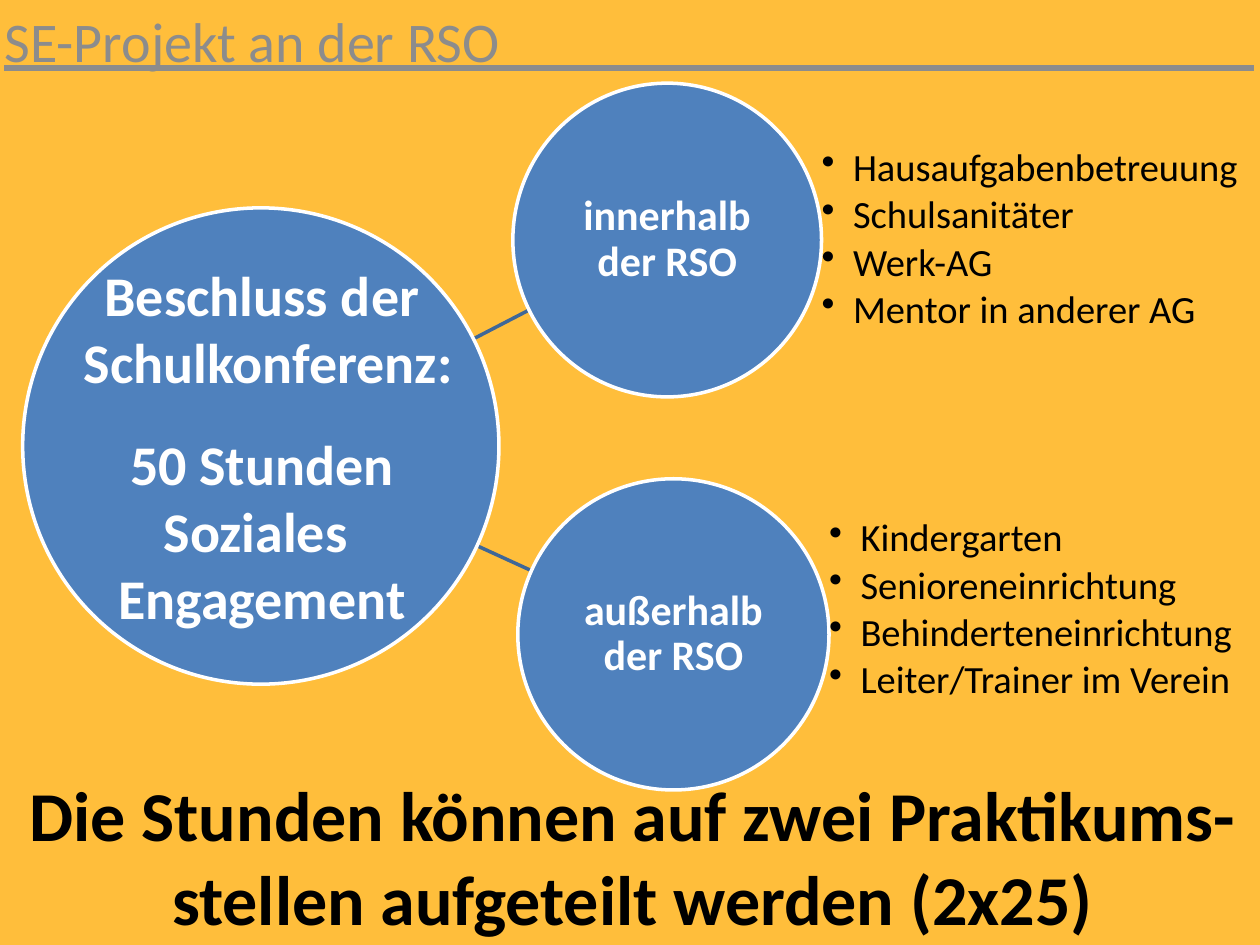
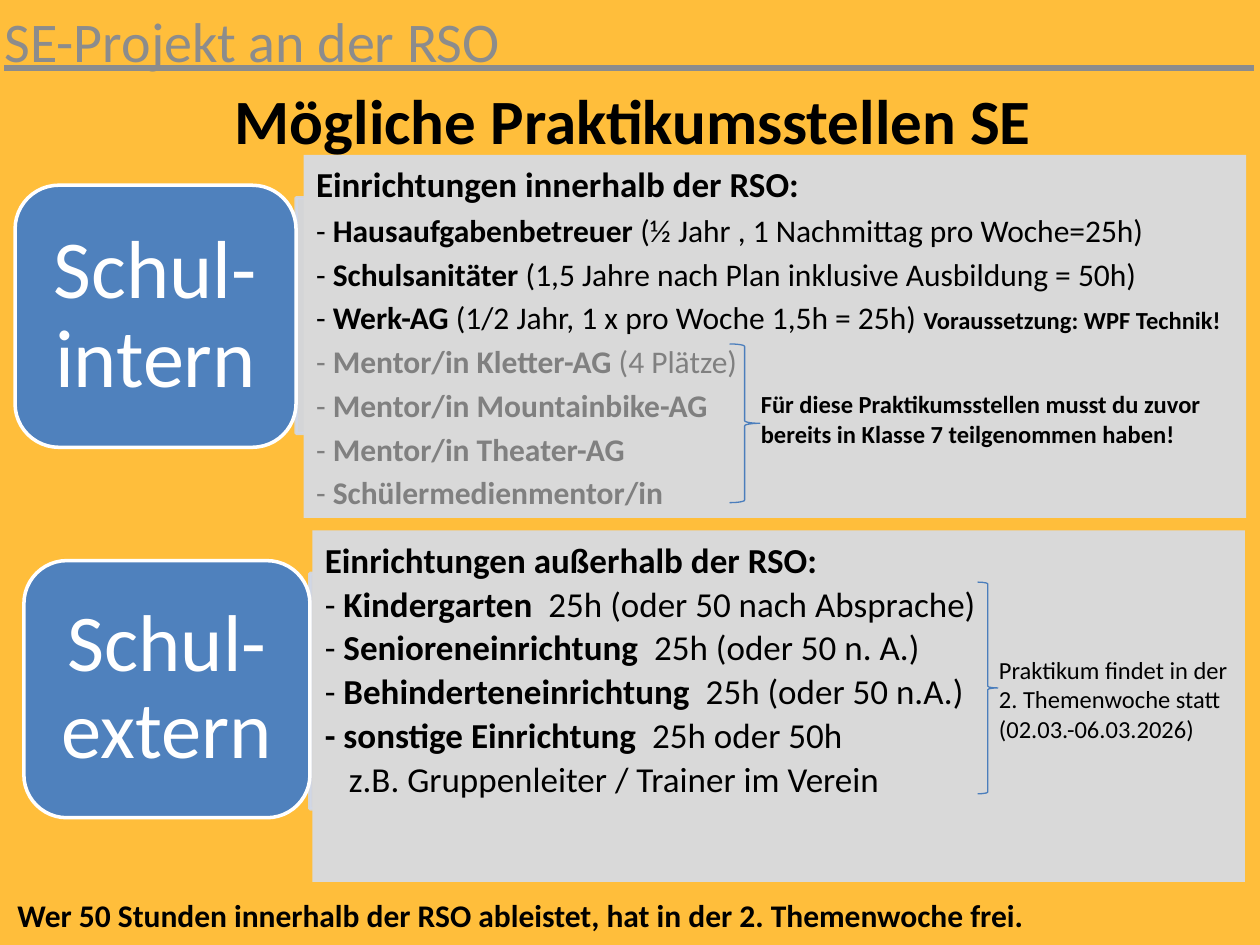
from lxml import etree
from pptx import Presentation
from pptx.dml.color import RGBColor
from pptx.enum.shapes import MSO_CONNECTOR, MSO_SHAPE
from pptx.enum.text import MSO_ANCHOR, PP_ALIGN
from pptx.oxml.ns import qn
from pptx.util import Pt

PX = 9144
FONT = "Calibri"
AMBER = RGBColor(0xFF, 0xBE, 0x3B)
BLUE = RGBColor(0x4F, 0x81, 0xBD)
STEEL = RGBColor(0x3F, 0x67, 0x97)
BRACE = RGBColor(0x4B, 0x7E, 0xBC)
PALE = RGBColor(0xD0, 0xD8, 0xE8)
SILVER = RGBColor(0xD9, 0xD9, 0xD9)
GREY = RGBColor(0x8C, 0x8C, 0x8C)
FADED = RGBColor(0x80, 0x80, 0x80)
BLACK = RGBColor(0, 0, 0)
WHITE = RGBColor(0xFF, 0xFF, 0xFF)
LEFT, CENTER = PP_ALIGN.LEFT, PP_ALIGN.CENTER
TOP, MIDDLE = MSO_ANCHOR.TOP, MSO_ANCHOR.MIDDLE
OVAL, RECT = MSO_SHAPE.OVAL, MSO_SHAPE.RECTANGLE
ROUND, ARROW = MSO_SHAPE.ROUNDED_RECTANGLE, MSO_SHAPE.RIGHT_ARROW
CURLY = MSO_SHAPE.RIGHT_BRACE
STRAIGHT = MSO_CONNECTOR.STRAIGHT


def emu(*sizes):
    """Turn px lengths into EMU."""
    return [size * PX for size in sizes]


def write(shape, rows, size, color=BLACK, bold=False, align=LEFT,
          anchor=TOP, inset=(10, 5), wrap=True, line=None):
    """Write one paragraph per row, with bold toggled at each asterisk."""
    frame = shape.text_frame
    frame.word_wrap = wrap
    frame.vertical_anchor = anchor
    frame.margin_left, frame.margin_top = emu(*inset)
    frame.margin_right, frame.margin_bottom = emu(*inset)
    for i, row in enumerate(rows):
        para = frame.add_paragraph() if i else frame.paragraphs[0]
        para.alignment = align
        para.line_spacing = line
        font = para.font
        font.name, font.size, font.bold = FONT, Pt(size), bold
        font.color.rgb = color
        for j, part in enumerate(row.split("*")):
            if part:
                run = para.add_run()
                run.text = part
                if "*" in row:
                    run.font.bold = j % 2 == 1
    return frame.paragraphs


def label(slide, box, rows, size, **style):
    """Add a text box."""
    return write(slide.shapes.add_textbox(*emu(*box)), rows, size, **style)


def form(slide, kind, box, fill=None, edge=None, width=2):
    """Add a preset shape without shadow."""
    shape = slide.shapes.add_shape(kind, *emu(*box))
    shape.shadow.inherit = False
    if fill is None:
        shape.fill.background()
    else:
        shape.fill.solid()
        shape.fill.fore_color.rgb = fill
    if edge is None:
        shape.line.fill.background()
    else:
        shape.line.color.rgb = edge
        shape.line.width = Pt(width)
    return shape


def title(slide):
    """Add the ruled title that all slides share."""
    label(slide, (-20, 0, 1039, 71), ["SE-Projekt an der RSO" + "_" * 27], 32,
          color=GREY, align=CENTER)[0].font.underline = True


def link(slide, start, end):
    """Draw a line between two circles."""
    line = slide.shapes.add_connector(STRAIGHT, *emu(*start, *end))
    line.line.color.rgb = STEEL
    line.line.width = Pt(2)
    etree.SubElement(line._element.spPr, qn("a:effectLst"))


def hub(slide, box):
    """Add the large circle with the decision."""
    x, y, w, h = box
    form(slide, OVAL, box, BLUE, WHITE)
    style = dict(color=WHITE, bold=True, align=CENTER, wrap=False)
    label(slide, (x + 37, y + 37, 316, 118),
          ["Beschluss der ", "Schulkonferenz:"], 32, **style)
    label(slide, (x + 65, y + 171, 250, 172),
          ["50 Stunden", "Soziales ", "Engagement"], 32, **style)


def branch(slide, box, name, items, lift=0):
    """Add a circle and the bulleted list to its right."""
    x, y, w, h = box
    write(form(slide, OVAL, box, BLUE, WHITE), [name], 24, color=WHITE,
          bold=True, align=CENTER, anchor=MIDDLE, inset=(2, 2), line=0.9)
    paras = label(slide, (x + w, y - lift, 345, h), items, 22,
                  anchor=MIDDLE, inset=(0, 0), line=0.9)
    for para in paras:
        para.space_after = Pt(3.3)
        props = para._p.get_or_add_pPr()
        props.set("marL", str(25 * PX))
        props.set("indent", str(-25 * PX))
        mark = etree.Element(qn("a:buChar"), char="•")
        props.find(qn("a:defRPr")).addprevious(mark)


def panel(slide, box, tile, name, size, rows):
    """Add a tile, the arrow behind and the grey panel with its rows."""
    x, y, w, h = box
    wide, high = tile
    left = x - 229
    arrow = form(slide, ARROW, (left + wide, y + 3, 626, 249), PALE, PALE)
    arrow.adjustments[0] = 0.75
    for tint in arrow._element.spPr.iter(qn("a:srgbClr")):
        etree.SubElement(tint, qn("a:alpha"), val="90000")
    write(form(slide, ROUND, (left, y + 24, wide, high), BLUE, WHITE), [name],
          size, color=WHITE, align=CENTER, anchor=MIDDLE, inset=(20, 10),
          line=0.9)
    return write(form(slide, RECT, box, SILVER), rows, 20, line=Pt(25))


def remark(slide, box, drop, width, rows, bold=False):
    """Add a brace and the note at its tip."""
    x, y, w, h = box
    form(slide, CURLY, box, edge=BRACE, width=0.75)
    label(slide, (x + w - 9, y + drop, width, 57), rows, 14, bold=bold)


def plan(slide):
    """Build the slide on the two kinds of placement."""
    title(slide)
    label(slide, (-4, 607, 1012, 145),
          ["Die Stunden können auf zwei Praktikums-stellen aufgeteilt werden "
           "(2x25)"], 40, bold=True, align=CENTER)
    link(slide, (339, 415), (422, 453))
    link(slide, (339, 288), (420, 246))
    hub(slide, (18, 165, 378, 378))
    branch(slide, (407, 66, 245, 249), "innerhalb der RSO",
           ["Hausaufgabenbetreuung", "Schulsanitäter", "Werk-AG",
            "Mentor in anderer AG"])
    branch(slide, (411, 380, 247, 247), "außerhalb der RSO",
           ["Kindergarten", "Senioreneinrichtung", "Behinderteneinrichtung",
            "Leiter/Trainer im Verein"], lift=19)


def places(slide):
    """Build the slide on the possible placements."""
    title(slide)
    label(slide, (173, 60, 659, 71), ["Mögliche Praktikumsstellen SE"], 36,
          bold=True, align=CENTER, wrap=False)
    label(slide, (4, 706, 837, 40),
          ["Wer 50 Stunden innerhalb der RSO ableistet, hat in der "
           "2. Themenwoche frei."], 18, bold=True, wrap=False)
    inner = panel(slide, (241, 123, 748, 288), (223, 208), "Schul-intern", 47, [
        "*Einrichtungen innerhalb der RSO:*",
        "- *Hausaufgabenbetreuer *(½ Jahr , 1 Nachmittag pro Woche=25h)",
        "- *Schulsanitäter* (1,5 Jahre nach Plan inklusive Ausbildung = 50h)",
        "- *Werk-AG *(1/2 Jahr, 1 x pro Woche 1,5h = 25h) "
        "*Voraussetzung: WPF Technik!*",
        "- *Mentor/in Kletter-AG *(4 Plätze)",
        "- *Mentor/in Mountainbike-AG*",
        "- *Mentor/in Theater-AG*",
        "- *Schülermedienmentor/in*"])
    for para in inner[1:]:
        para.font.size = Pt(18)
    for para in inner[4:]:
        para.font.color.rgb = FADED
    inner[3].runs[-1].font.size = Pt(14)
    remark(slide, (579, 273, 24, 126), 31, 380,
           ["Für diese Praktikumsstellen musst du zuvor bereits in Klasse 7 "
            "teilgenommen haben!"], bold=True)
    outer = panel(slide, (248, 421, 740, 279), (227, 204), "Schul- extern", 46, [
        "*Einrichtungen außerhalb der RSO:*",
        "- *Kindergarten * 25h (oder 50 nach Absprache)",
        "- *Senioreneinrichtung * 25h (oder 50 n. A.)",
        "- *Behinderteneinrichtung * 25h (oder 50 n.A.)",
        "*- sonstige Einrichtung * 25h oder 50h",
        "z.B. Gruppenleiter / Trainer im Verein"])
    outer[5]._p.get_or_add_pPr().set("marL", str(19 * PX))
    remark(slide, (776, 462, 16, 168), 53, 217,
           ["Praktikum findet in der", "2. Themenwoche statt",
            "(02.03.-06.03.2026)"])


def main():
    """Build and save the deck."""
    deck = Presentation()
    deck.slide_width, deck.slide_height = emu(1000, 750)
    ground = deck.slide_master.background.fill
    ground.solid()
    ground.fore_color.rgb = AMBER
    for build in (plan, places):
        build(deck.slides.add_slide(deck.slide_layouts[6]))
    deck.save("out.pptx")


if __name__ == "__main__":
    main()
